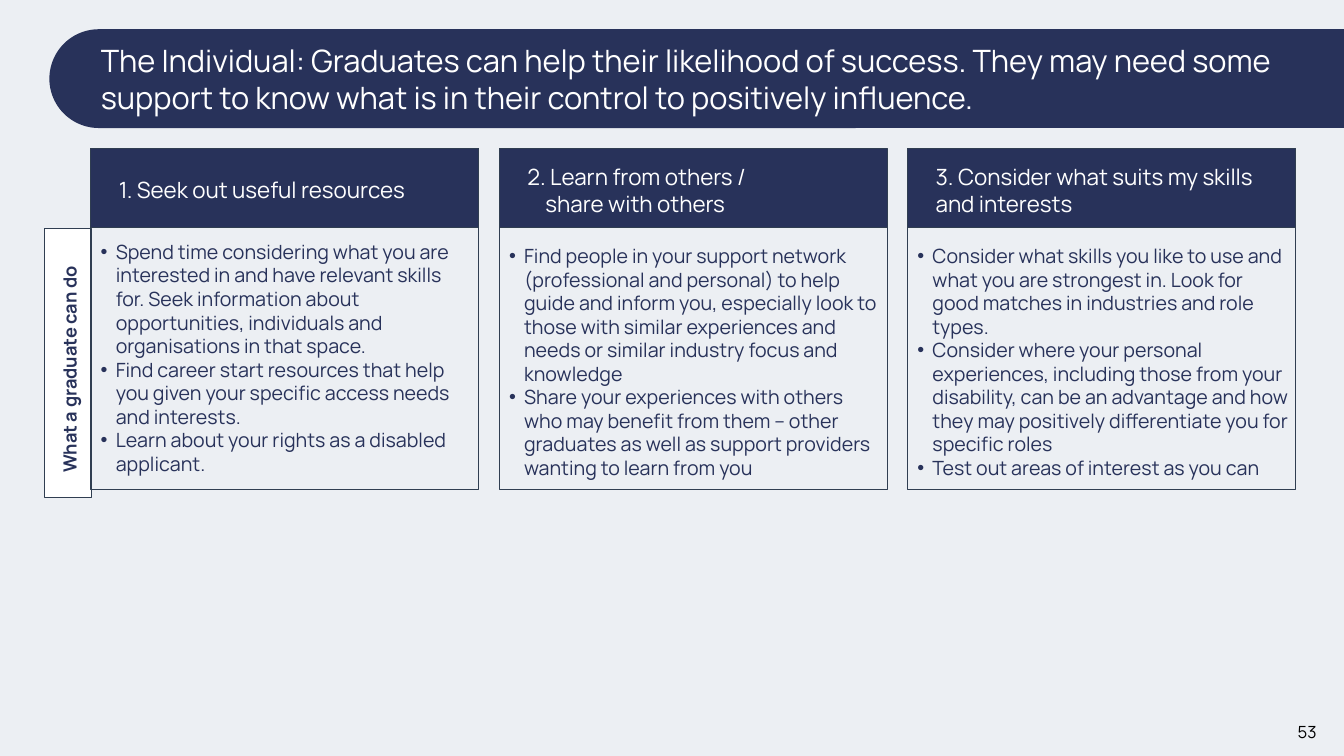
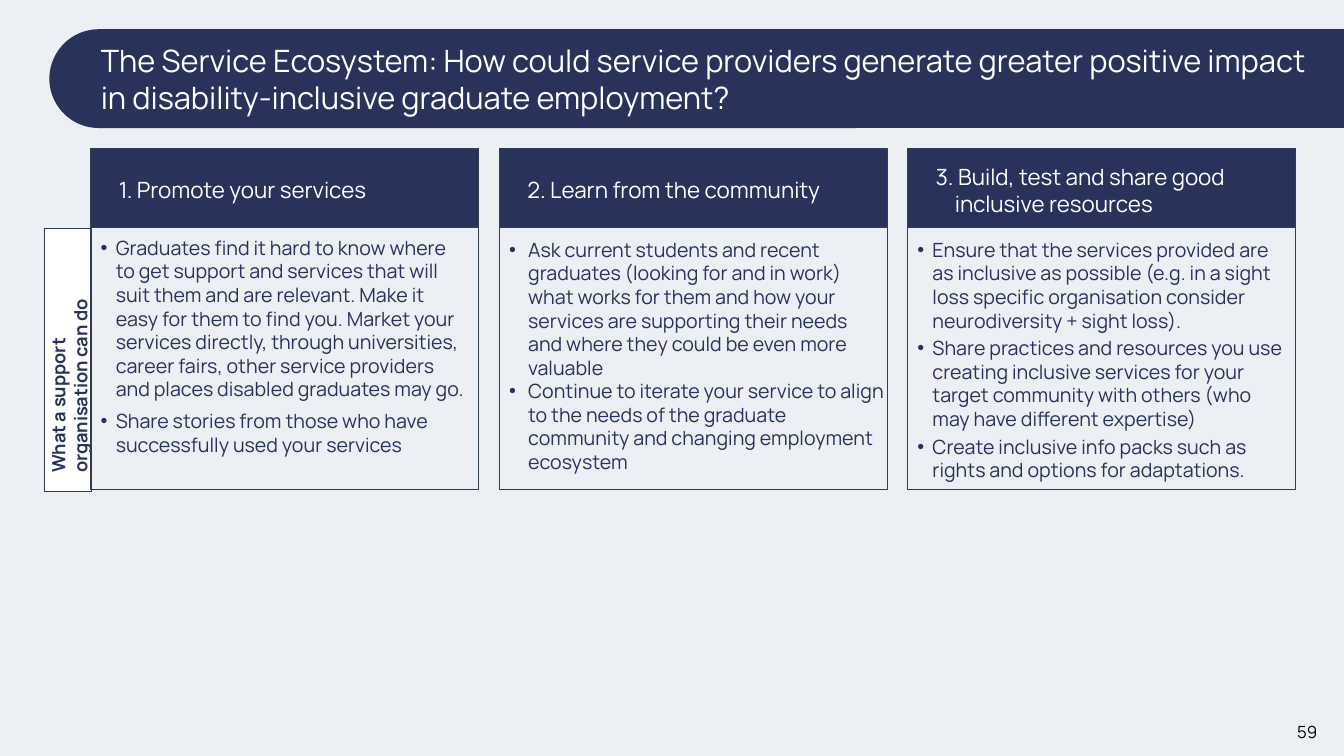
from lxml import etree
from pptx import Presentation
from pptx import util as u
from pptx.dml.color import RGBColor
from pptx.enum import shapes, text
from pptx.oxml.ns import qn

COLOURS = {"navy": "28325A", "edge": "303E51", "page": "ECEFF3",
           "white": "FFFFFF", "black": "000000"}
FONT = "Manrope"
WIDTH, HEIGHT = 13.33, 7.5
LEFT, CARD_WIDTH, GAP = 0.9, 3.85, 0.2
HEAD_TOP, HEAD_HEIGHT = 1.47, 0.79
BODY_TOP, BODY_HEIGHT = 2.26, 2.6

SLIDES = [
    {
        "title": "The Individual: Graduates can help their likelihood of success. "
                 "They may need some support to know what is in their control to "
                 "positively influence.",
        "label": "What a graduate can do", "label_height": 2.67, "label_lines": 1,
        "number": "53",
        "cards": [
            {"head": ["1. Seek out useful resources"], "inset": 0.12, "right": 0.12,
             "points": [
                 "Spend time considering what you are interested in and have relevant "
                 "skills for. Seek information about opportunities, individuals and "
                 "organisations in that space.",
                 "Find career start resources that help you given your specific access "
                 "needs and interests.",
                 "Learn about your rights as a disabled applicant."]},
            {"head": ["2. Learn from others /", "share with others"], "head_hang": 0.18,
             "inset": 0.16,
             "points": [
                 "Find people in your support network (professional and personal) to "
                 "help guide and inform you, especially look to those with similar "
                 "experiences and needs or similar industry focus and knowledge",
                 "Share your experiences with others who may benefit from them – other "
                 "graduates as well as support providers wanting to learn from you"]},
            {"head": ["3. Consider what suits my skills and interests"], "inset": 0.16,
             "points": [
                 "Consider what skills you like to use and what you are strongest in. "
                 "Look for good matches in industries and role types.",
                 "Consider where your personal experiences, including those from your "
                 "disability, can be an advantage and how they may positively "
                 "differentiate you for specific roles",
                 "Test out areas of interest as you can"]},
        ],
    },
    {
        "title": "The Service Ecosystem: How could service providers generate greater "
                 "positive impact in disability-inclusive graduate employment?",
        "label": "What a support organisation can do", "label_height": 2.61,
        "label_lines": 2, "number": "59",
        "cards": [
            {"head": ["1. Promote your services"], "inset": 0.08, "right": 0.12,
             "before": 6,
             "points": [
                 "Graduates find it hard to know where to get support and services that "
                 "will suit them and are relevant. Make it easy for them to find you. "
                 "Market your services directly, through universities, career fairs, "
                 "other service providers and places disabled graduates may go.",
                 "Share stories from those who have successfully used your services"]},
            {"head": ["2. Learn from the community"], "inset": 0.1, "hang": 0.19,
             "points": [
                 "Ask current students and recent graduates (looking for and in work) "
                 "what works for them and how your services are supporting their needs "
                 "and where they could be even more valuable",
                 "Continue to iterate your service to align to the needs of the graduate "
                 "community and changing employment ecosystem"]},
            {"head": ["3. Build, test and share good inclusive resources"],
             "head_hang": 0.19, "inset": 0.1, "before": 3,
             "points": [
                 "Ensure that the services provided are as inclusive as possible (e.g. in "
                 "a sight loss specific organisation consider neurodiversity + sight "
                 "loss).",
                 "Share practices and resources you use creating inclusive services for "
                 "your target community with others (who may have different expertise)",
                 "Create inclusive info packs such as rights and options for "
                 "adaptations."]},
        ],
    },
]


def colour(name):
    return RGBColor.from_string(COLOURS[name])


class Builder:
    def __init__(self):
        self.deck = Presentation()
        self.deck.slide_width = u.Inches(WIDTH)
        self.deck.slide_height = u.Inches(HEIGHT)
        fill = self.deck.slide_master.background.fill
        fill.solid()
        fill.fore_color.rgb = colour("page")
        self.page = None

    def shape(self, kind, place, fill=None, line=None):
        box = self.page.shapes.add_shape(kind, *map(u.Inches, place))
        box.shadow.inherit = False
        if fill:
            box.fill.solid()
            box.fill.fore_color.rgb = colour(fill)
        else:
            box.fill.background()
        if line:
            box.line.color.rgb = colour(line)
            box.line.width = u.Pt(0.75)
        else:
            box.line.fill.background()
        return box

    def panel(self, place, fill=None):
        return self.shape(shapes.MSO_SHAPE.RECTANGLE, place, fill, "edge")

    def frame(self, box, insets=(0.1, 0.05, 0.1, 0.05), middle=False):
        """Set wrapping, insets (left, top, right, bottom) and anchor."""
        frame = box.text_frame
        frame.word_wrap = True
        frame.auto_size = text.MSO_AUTO_SIZE.NONE
        frame.margin_left, frame.margin_top, frame.margin_right, frame.margin_bottom = \
            map(u.Inches, insets)
        frame.vertical_anchor = text.MSO_ANCHOR.MIDDLE if middle else text.MSO_ANCHOR.TOP
        return frame

    def add_lines(self, para, lines, size, ink, bold=False, hang=0, bullet=False,
                  align=text.PP_ALIGN.LEFT):
        para.alignment = align
        props = para._p.get_or_add_pPr()
        if hang:
            props.set("marL", str(u.Inches(hang)))
            props.set("indent", str(-u.Inches(hang)))
        if bullet:
            face = etree.SubElement(props, qn("a:buFont"))
            face.set("typeface", "Arial")
            etree.SubElement(props, qn("a:buChar")).set("char", "•")
        for index, line in enumerate(lines):
            if index:
                para.add_line_break()
            span = para.add_run()
            span.text = line
            span.font.name = FONT
            span.font.size = u.Pt(size)
            span.font.bold = bold
            span.font.color.rgb = colour(ink)

    def text_box(self, place):
        return self.page.shapes.add_textbox(*map(u.Inches, place))

    def new_page(self, title):
        self.page = self.deck.slides.add_slide(self.deck.slide_layouts[5])
        band = self.shape(shapes.MSO_SHAPE.ROUNDED_RECTANGLE,
                          (0.49, 0.29, 13.47, 0.98), "navy")
        band.adjustments[0] = 0.5
        self.page.shapes._spTree.insert(2, band._element)  # behind the title
        box = self.page.shapes.title
        box.left, box.top, box.width, box.height = map(
            u.Inches, (LEFT, 0.53, WIDTH - LEFT, 0.5))
        frame = self.frame(box, middle=True)
        self.add_lines(frame.paragraphs[0], [title], 22, "white")

    def card(self, column, head, points, inset, right=0.03, hang=0.15, head_hang=0,
             before=0):
        left = LEFT + column * (CARD_WIDTH + GAP)
        body = self.panel((left, BODY_TOP, CARD_WIDTH, BODY_HEIGHT))
        frame = self.frame(body, (0.1, inset, right, 0))
        for index, point in enumerate(points):
            para = frame.add_paragraph() if index else frame.paragraphs[0]
            if index and before:
                para.space_before = u.Pt(before)
            self.add_lines(para, [point], 14, "navy", hang=hang, bullet=True)
        top = self.panel((left, HEAD_TOP, CARD_WIDTH, HEAD_HEIGHT), "navy")
        frame = self.frame(top, (0.28, 0.08, 0.2, 0.04), middle=True)
        self.add_lines(frame.paragraphs[0], head, 16, "white", hang=head_hang)

    def side_label(self, label, height, lines):
        self.panel((0.44, 2.27, 0.47, height), "white")
        length, depth = 2.46, 0.1 + 0.22 * lines
        box = self.text_box((0.69 - length / 2, 3.56 - depth / 2, length, depth))
        box.rotation = 270
        self.add_lines(self.frame(box).paragraphs[0], [label], 13, "navy", bold=True)

    def page_number(self, number):
        box = self.text_box((12.69, 7.1, 0.55, 0.32))
        frame = self.frame(box, middle=True)
        self.add_lines(frame.paragraphs[0], [number], 12, "black",
                       align=text.PP_ALIGN.CENTER)


def main():
    builder = Builder()
    for slide in SLIDES:
        builder.new_page(slide["title"])
        builder.side_label(slide["label"], slide["label_height"], slide["label_lines"])
        for column, card in enumerate(slide["cards"]):
            builder.card(column, **card)
        builder.page_number(slide["number"])
    builder.deck.save("out.pptx")


if __name__ == "__main__":
    main()
